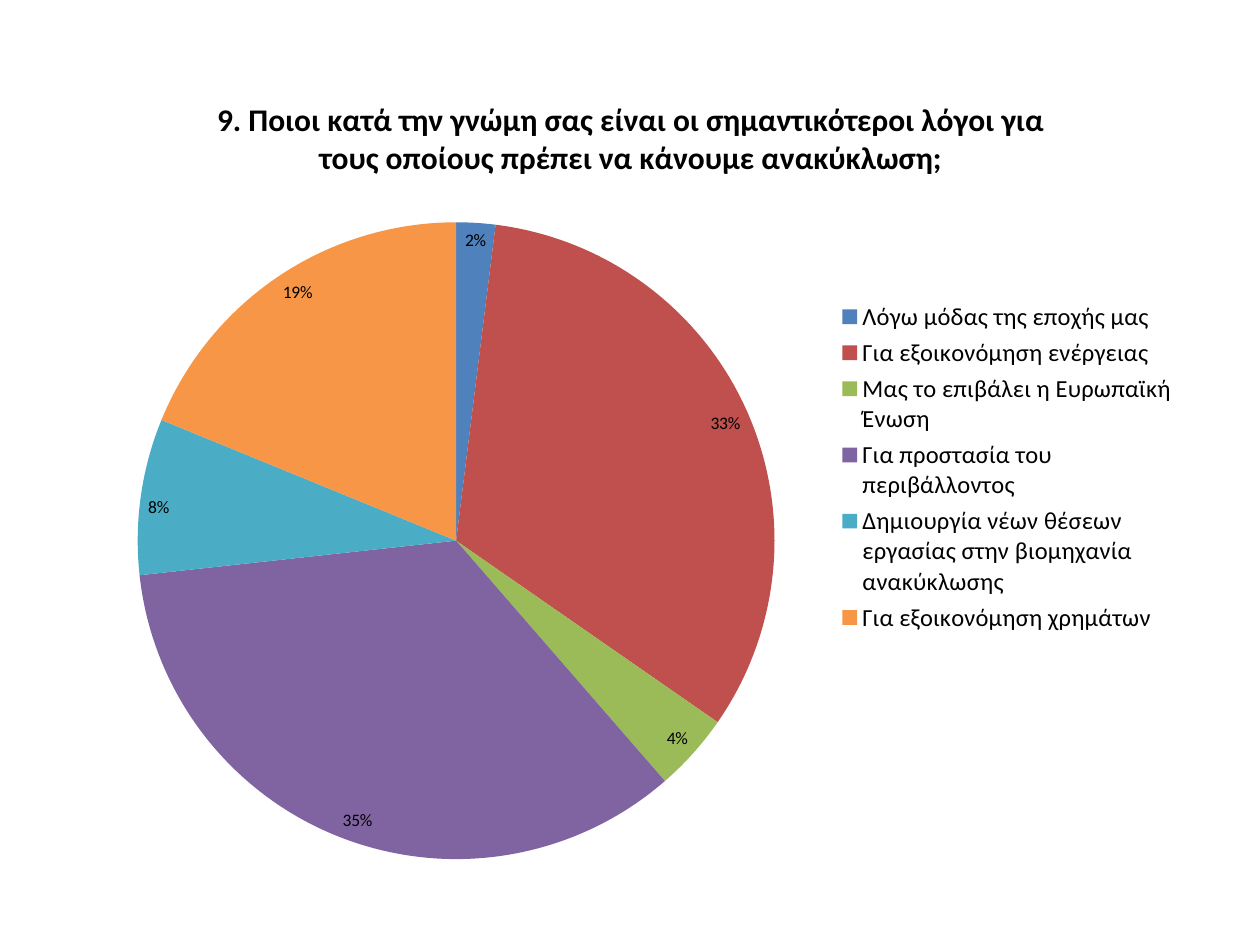
from dataclasses import dataclass

from lxml.etree import SubElement
from pptx import Presentation
from pptx.chart.data import CategoryChartData
from pptx.dml.color import RGBColor
from pptx.enum.chart import XL_CHART_TYPE, XL_LABEL_POSITION, XL_LEGEND_POSITION
from pptx.oxml.ns import qn
from pptx.util import Cm, Pt


@dataclass(frozen=True)
class Theme:
    font: str = "Calibri"
    text: str = "000000"
    slices: tuple = ("4F81BD", "C0504D", "9BBB59", "8064A2", "4BACC6", "F79646")
    title_size: int = 18
    legend_size: int = 14
    label_size: int = 10


THEME = Theme()
QUESTION = (
    "9. Ποιοι κατά την γνώµη σας είναι οι σημαντικότεροι λόγοι για "
    "τους οποίους πρέπει να κάνουμε ανακύκλωση;"
)
REASONS = {
    "Λόγω μόδας της εποχής µας": 2,
    "Για εξοικονόμηση ενέργειας": 33,
    "Μας το επιβάλει η Ευρωπαϊκή Ένωση": 4,
    "Για προστασία του περιβάλλοντος": 35,
    "Δημιουργία νέων θέσεων εργασίας στην βιομηχανία ανακύκλωσης": 8,
    "Για εξοικονόμηση χρημάτων": 19,
}


def style_font(font, size, bold=False):
    font.name = THEME.font
    font.size = Pt(size)
    font.bold = bold
    font.color.rgb = RGBColor.from_string(THEME.text)


def place_chart_part(part, index, target=None, **fractions):
    for previous in part.findall(qn("c:layout")):
        part.remove(previous)
    layout = SubElement(part, qn("c:layout"))
    part.insert(index, layout)
    manual = SubElement(layout, qn("c:manualLayout"))
    settings = {"layoutTarget": target} if target else {}
    settings.update({f"{side}Mode": "edge" for side in ("x", "y")})
    settings.update(fractions)
    for name, value in settings.items():
        SubElement(manual, qn(f"c:{name}")).set("val", str(value))


def format_title(chart):
    chart.has_title = True
    text_frame = chart.chart_title.text_frame
    text_frame.text = QUESTION
    style_font(text_frame.paragraphs[0].font, THEME.title_size, bold=True)
    title = chart.element.find(".//" + qn("c:title"))
    place_chart_part(title, 1, x=0.12, y=0.04)


def format_legend(chart):
    chart.has_legend = True
    chart.legend.position = XL_LEGEND_POSITION.RIGHT
    chart.legend.include_in_layout = False
    style_font(chart.legend.font, THEME.legend_size)
    legend = chart.element.find(".//" + qn("c:legend"))
    place_chart_part(legend, 1, x=0.68, y=0.29, w=0.31, h=0.42)


def format_pie(chart):
    plot = chart.plots[0]
    plot.vary_by_categories = True
    for index, color in enumerate(THEME.slices):
        fill = plot.series[0].points[index].format.fill
        fill.solid()
        fill.fore_color.rgb = RGBColor.from_string(color)
    plot.has_data_labels = True
    labels = plot.data_labels
    labels.show_value = False
    labels.show_percentage = True
    labels.number_format = "0%"
    labels.number_format_is_linked = False
    labels.position = XL_LABEL_POSITION.INSIDE_END
    style_font(labels.font, THEME.label_size)
    plot_area = chart.element.find(".//" + qn("c:plotArea"))
    place_chart_part(plot_area, 0, "inner", x=0.05, y=0.2, w=0.58, h=0.78)


def add_reasons_chart(slide, left, top, width, height):
    chart_data = CategoryChartData()
    chart_data.categories = list(REASONS)
    chart_data.add_series("Series 1", list(REASONS.values()))
    chart = slide.shapes.add_chart(
        XL_CHART_TYPE.PIE, left, top, width, height, chart_data
    ).chart
    style_font(chart.font, THEME.label_size)
    format_title(chart)
    format_legend(chart)
    format_pie(chart)


def main():
    presentation = Presentation()
    presentation.slide_width = Cm(25.4)
    presentation.slide_height = Cm(19.05)
    slide = presentation.slides.add_slide(presentation.slide_layouts[6])
    add_reasons_chart(slide, Cm(1.57), Cm(1.19), Cm(22.43), Cm(16.46))
    presentation.save("out.pptx")


if __name__ == "__main__":
    main()
